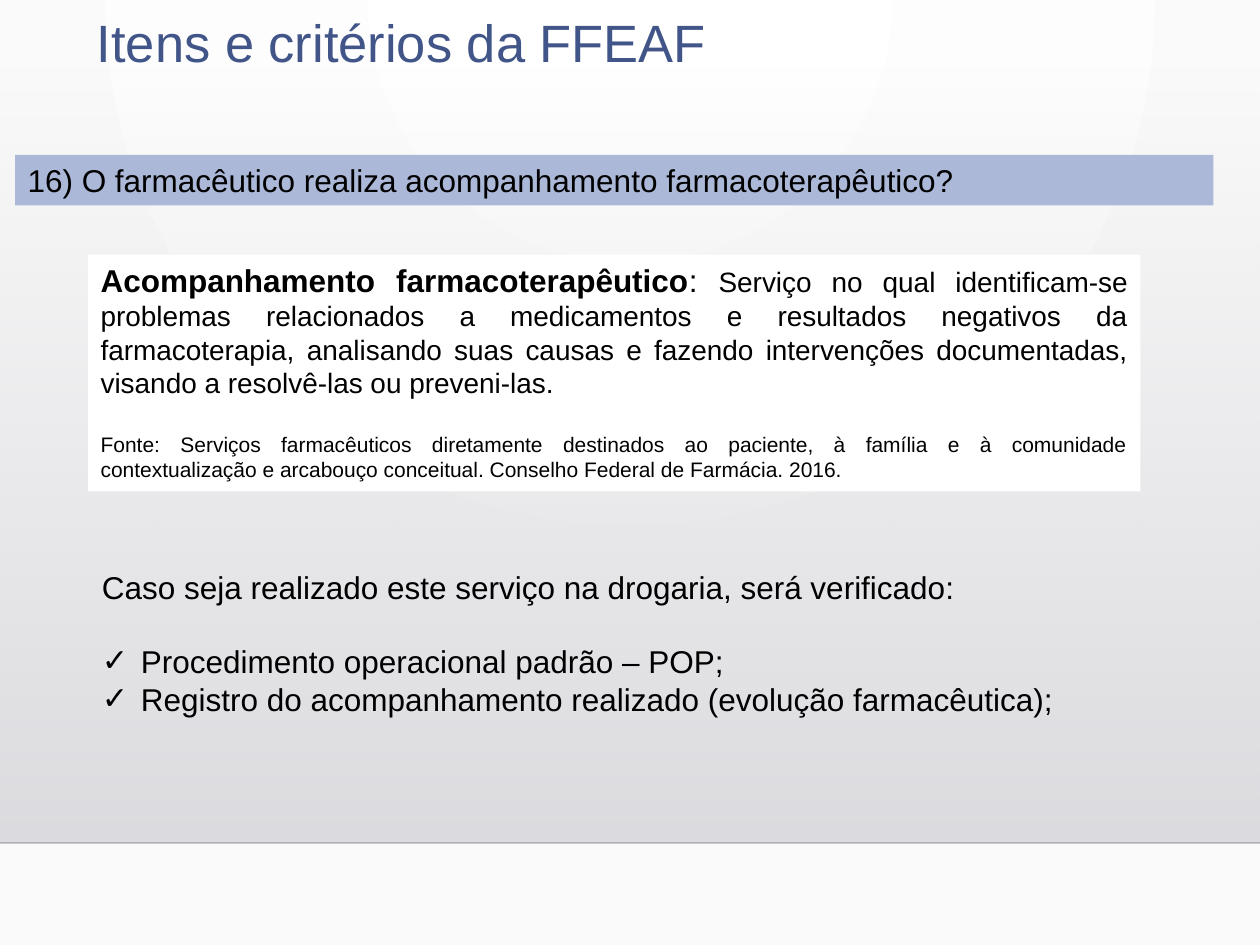
from pptx import Presentation
from pptx.dml.color import RGBColor
from pptx.enum.shapes import MSO_CONNECTOR, MSO_SHAPE
from pptx.enum.text import MSO_ANCHOR, PP_ALIGN
from pptx.oxml.ns import qn
from pptx.util import Inches, Pt
from lxml import etree

RECT = MSO_SHAPE.RECTANGLE
LINE = MSO_CONNECTOR.STRAIGHT
TOP = MSO_ANCHOR.TOP
LEFT, JUST = PP_ALIGN.LEFT, PP_ALIGN.JUSTIFY

FONT = "Arial"
COLORS = {
    "text": "000000", "title": "415588", "band": "ABB8D7", "white": "FFFFFF",
    "pale": "FAFAFA", "haze": "DCDCE0", "gray": "DEDEE2", "rule": "000001",
}


def rgb(name):
    return RGBColor.from_string(COLORS[name])


def add(parent, tag, **attrs):
    return etree.SubElement(parent, qn(tag), attrs)


def fade(item, alpha):
    """Set the opacity of the first colour below item, in percent."""
    color = next(item.iter(qn("a:srgbClr")))
    add(color, "a:alpha", val=str(alpha * 1000))


class Page:
    def __init__(self, slide):
        self.slide = slide
        self.shapes = slide.shapes

    def blend(self, fill, names):
        fill.gradient()
        for stop, name in zip(fill.gradient_stops, names):
            stop.color.rgb = rgb(name)

    def backdrop(self, *names):
        self.blend(self.slide.background.fill, names)
        grad = next(self.slide.element.iter(qn("a:gradFill")))
        grad.remove(grad.find(qn("a:lin")))
        circle = add(grad, "a:path", path="circle")
        add(circle, "a:fillToRect", l="43000", r="43000", b="100000")

    def box(self, x, y, w, h, fill=None):
        shape = self.shapes.add_shape(
            RECT, Inches(x), Inches(y), Inches(w), Inches(h))
        shape.shadow.inherit = False
        shape.line.fill.background()
        if fill:
            shape.fill.solid()
            shape.fill.fore_color.rgb = rgb(fill)
        return shape

    def veil(self, x, y, w, h, *names):
        shape = self.box(x, y, w, h)
        self.blend(shape.fill, names)
        shape.fill.gradient_angle = 270
        fade(shape.element, 0)

    def rule(self, x, y, end):
        line = self.shapes.add_connector(
            LINE, Inches(x), Inches(y), Inches(end), Inches(y))
        line.line.color.rgb = rgb("rule")
        line.line.width = Pt(1)
        fade(line.element, 20)
        add(line.element.spPr, "a:effectLst")

    def label(self, x, y, w, h):
        return self.shapes.add_textbox(
            Inches(x), Inches(y), Inches(w), Inches(h))

    def put_text(self, shape, paras, align=LEFT, color="text"):
        """Fill shape with (runs, size, gap, bullet) paragraphs."""
        frame = shape.text_frame
        frame.word_wrap = True
        frame.vertical_anchor = TOP
        for i, (runs, size, gap, bullet) in enumerate(paras):
            para = frame.add_paragraph() if i else frame.paragraphs[0]
            para.alignment = align
            if gap:
                para.space_before = Pt(gap)
            if bullet:
                self.tick(para)
            para.font.name = FONT
            para.font.size = Pt(size)
            para.font.color.rgb = rgb(color)
            for text, own, bold in runs:
                run = para.add_run()
                run.text = text
                if own:
                    run.font.size = Pt(own)
                if bold:
                    run.font.bold = True
        return frame

    def tick(self, para):
        props = para._p.get_or_add_pPr()
        step = Inches(0.31)
        props.set("marL", str(step))
        props.set("indent", str(-step))
        add(props, "a:buFont", typeface=FONT)
        add(props, "a:buChar", char="✓")


def plain(text, size, gap=0, bullet=False):
    return [(text, None, False)], size, gap, bullet


def main():
    deck = Presentation()
    deck.slide_width, deck.slide_height = Inches(10), Inches(7.5)
    page = Page(deck.slides.add_slide(deck.slide_layouts[6]))

    # Background
    page.backdrop("white", "pale")
    page.veil(0, 0.51, 10, 6.18, "haze", "gray")
    page.rule(0, 6.69, 10)

    # Question band
    page.put_text(page.box(0.12, 1.23, 9.51, 0.4, "band"), [
        plain("16) O farmacêutico realiza acompanhamento farmacoterapêutico?", 18),
    ])

    # Items to check
    page.put_text(page.label(0.71, 4.46, 8.35, 1.31), [
        plain("Caso seja realizado este serviço na drogaria, será verificado:", 18),
        plain("Procedimento operacional padrão – POP;", 18, 20.7, True),
        plain("Registro do acompanhamento realizado (evolução farmacêutica);",
              18, 0, True),
    ])

    # Definition and its source
    meaning = [
        ("Acompanhamento farmacoterapêutico", 18, True),
        (": ", 18, False),
        ("Serviço no qual identificam-se problemas relacionados a medicamentos "
         "e resultados negativos da farmacoterapia, analisando suas causas e "
         "fazendo intervenções documentadas, visando a resolvê-las ou "
         "preveni-las.", None, False),
    ]
    page.put_text(page.box(0.7, 2.02, 8.35, 1.88, "white"), [
        (meaning, 16, 0, False),
        plain("Fonte: Serviços farmacêuticos diretamente destinados ao paciente, "
              "à família e à comunidade contextualização e arcabouço conceitual. "
              "Conselho Federal de Farmácia. 2016.", 12, 18.4),
    ], JUST)

    # Title
    title = page.put_text(page.label(0.67, 0.09, 5.87, 0.87),
                          [plain("Itens e critérios da FFEAF", 30)],
                          color="title")
    title.paragraphs[0].line_spacing = 0.9

    deck.save("out.pptx")


if __name__ == "__main__":
    main()
